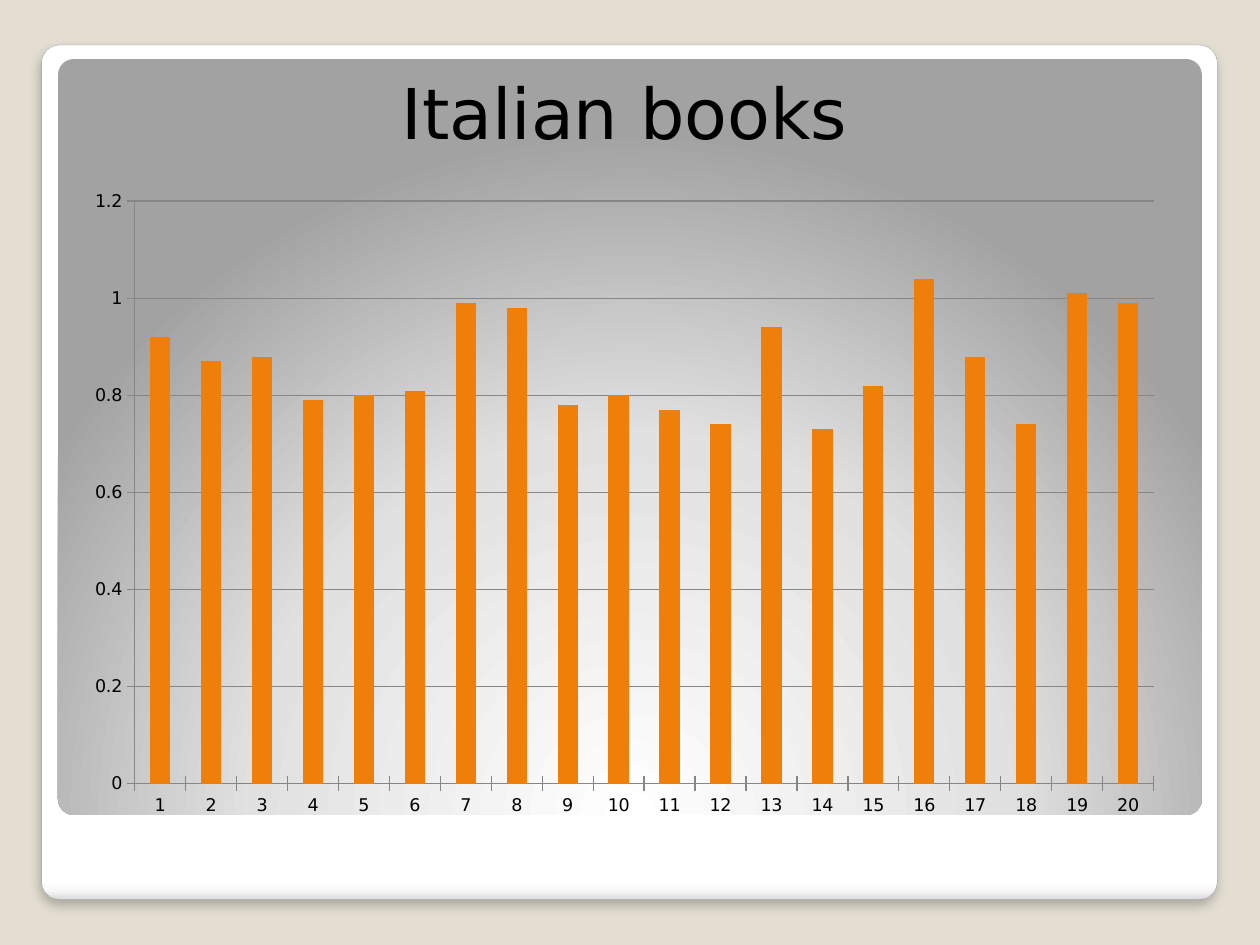
"""Build a slide with a column chart of Italian books on a framed panel."""
from lxml.etree import SubElement
from pptx import Presentation
from pptx.chart.data import CategoryChartData
from pptx.dml.color import RGBColor
from pptx.enum.chart import XL_CHART_TYPE, XL_TICK_MARK
from pptx.enum.shapes import MSO_SHAPE
from pptx.enum.text import MSO_AUTO_SIZE, PP_ALIGN
from pptx.oxml import parse_xml
from pptx.oxml.ns import nsdecls, qn
from pptx.util import Cm, Pt


def rgb(code):
    return RGBColor.from_string(code)


def panel(box, stops, shade):
    shape = slide.shapes.add_shape(MSO_SHAPE.ROUNDED_RECTANGLE, *map(Cm, box))
    shape.adjustments[0] = 0.021
    shape.shadow.inherit = False
    shape.line.fill.background()
    marks = "".join(
        f'<a:gs pos="{pos * 1000}"><a:srgbClr val="{code}"/></a:gs>'
        for pos, code in stops
    )
    shape._element.spPr.insert(2, parse_xml(
        f'<a:gradFill {nsdecls("a")} rotWithShape="1">'
        f"<a:gsLst>{marks}</a:gsLst>{shade}</a:gradFill>"
    ))
    return shape


deck = Presentation()
deck.slide_width, deck.slide_height = Cm(25.4), Cm(19.05)
slide = deck.slides.add_slide(deck.slide_layouts[6])
back = slide.background.fill
back.solid()
back.fore_color.rgb = rgb("E3DED1")

card = panel(
    (0.84, 0.91, 23.7, 17.22),
    [(0, "FFFFFF"), (98, "FFFFFF"), (99, "F7F7F7"), (100, "DADADA")],
    '<a:lin ang="5400000" scaled="0"/>',
)
card.line.color.rgb = rgb("A4A4A4")
card.line.width = Pt(0.16)
glow = card._element.spPr.find(qn("a:effectLst"))
glow.append(parse_xml(
    f'<a:outerShdw {nsdecls("a")} blurRad="{Pt(6)}" dist="{Pt(4)}" '
    'dir="5400000" algn="tl" rotWithShape="0">'
    '<a:srgbClr val="000000"><a:alpha val="25000"/></a:srgbClr></a:outerShdw>'
))
panel(
    (1.17, 1.19, 23.06, 15.24),
    [(0, "FFFFFF"), (55, "E1E1E1"), (100, "A2A2A2")],
    '<a:path path="circle">'
    '<a:fillToRect l="50000" t="175000" r="50000" b="-75000"/></a:path>',
)

vals = [0.92, 0.87, 0.88, 0.79, 0.8, 0.81, 0.99, 0.98, 0.78, 0.8,
        0.77, 0.74, 0.94, 0.73, 0.82, 1.04, 0.88, 0.74, 1.01, 0.99]
data = CategoryChartData()
data.categories = [str(num) for num in range(1, len(vals) + 1)]
data.add_series("Series 1", vals)
chart = slide.shapes.add_chart(
    XL_CHART_TYPE.COLUMN_CLUSTERED, *map(Cm, (1.47, 3.61, 22.23, 13.11)), data
).chart
chart.has_legend = chart.has_title = False
chart.font.color.rgb = rgb("000000")
for key, val in {"name": "DejaVu Sans", "size": Pt(10)}.items():
    setattr(chart.font, key, val)

plot = chart.plots[0]
plot.gap_width = 150
plot.vary_by_categories = False
bars = plot.series[0].format.fill
bars.solid()
bars.fore_color.rgb = rgb("F07F09")

rule = chart.value_axis
scale = {"minimum_scale": 0, "maximum_scale": 1.2, "major_unit": 0.2,
         "has_major_gridlines": True}
for key, val in scale.items():
    setattr(rule, key, val)
rule.tick_labels.number_format = "General"
rule.tick_labels.number_format_is_linked = False
for axis in (chart.category_axis, rule):
    axis.major_tick_mark = XL_TICK_MARK.CROSS
for part in (chart.category_axis, rule, rule.major_gridlines):
    part.format.line.color.rgb = rgb("868686")
    part.format.line.width = Pt(0.75)

area = chart._chartSpace.chart.plotArea
for old in area.findall(qn("c:layout")):
    area.remove(old)
frame = parse_xml(f'<c:layout {nsdecls("c")}><c:manualLayout/></c:layout>')
spot = {"layoutTarget": "inner", "xMode": "edge", "yMode": "edge",
        "x": 0.056, "y": 0.034, "w": 0.924, "h": 0.896}
for key, val in spot.items():
    SubElement(frame[0], qn(f"c:{key}")).set("val", str(val))
area.insert(0, frame)

text = slide.shapes.add_textbox(*map(Cm, (2.11, 1.27, 20.96, 1.96))).text_frame
text.word_wrap = True
text.auto_size = MSO_AUTO_SIZE.SHAPE_TO_FIT_TEXT
line = text.paragraphs[0]
line.alignment = PP_ALIGN.CENTER
run = line.add_run()
run.text = "Italian books"
run.font.color.rgb = rgb("000000")
for key, val in {"name": "DejaVu Sans", "size": Pt(40)}.items():
    setattr(run.font, key, val)

deck.save("out.pptx")
